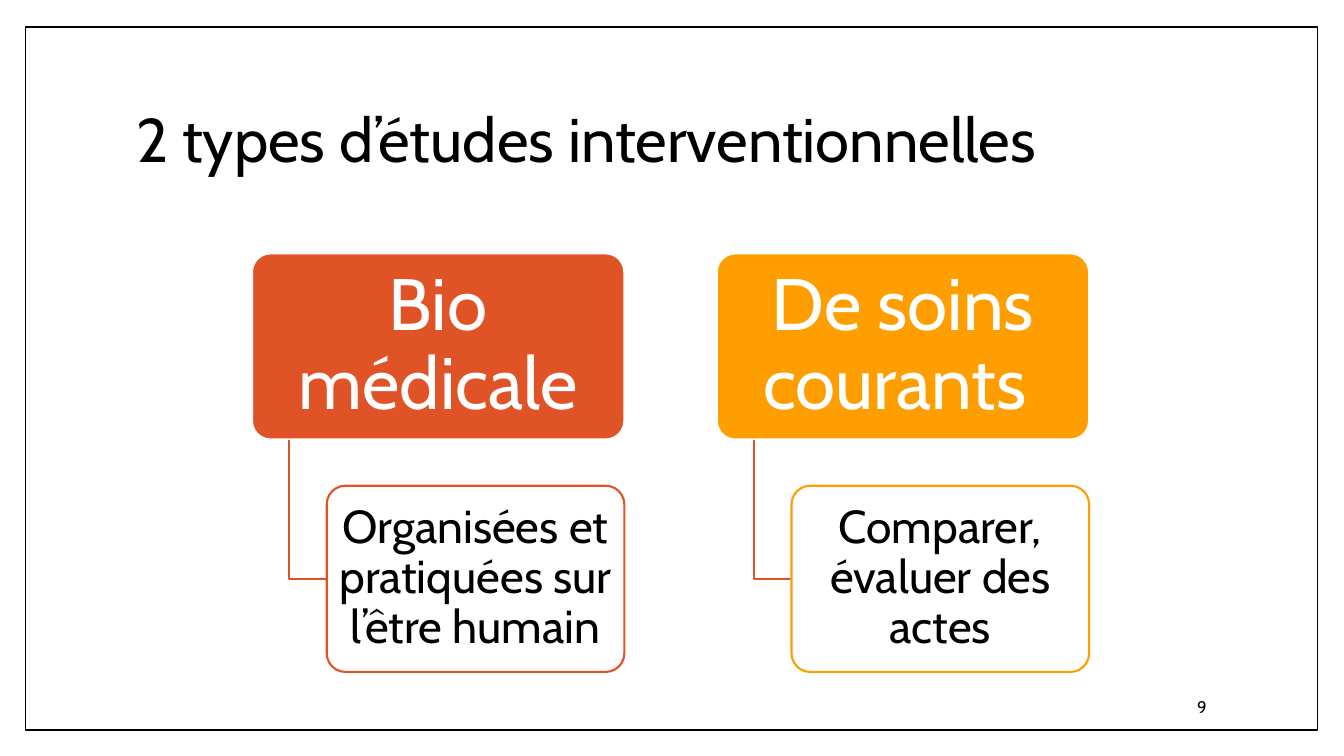
from dataclasses import dataclass

from lxml import etree
from pptx import Presentation
from pptx.dml.color import RGBColor
from pptx.enum.shapes import MSO_SHAPE
from pptx.enum.text import MSO_ANCHOR, PP_ALIGN
from pptx.oxml.ns import qn
from pptx.shapes.autoshape import Shape
from pptx.slide import Slide
from pptx.text.text import TextFrame
from pptx.util import Pt

RECTANGLE = MSO_SHAPE.RECTANGLE
ROUNDED = MSO_SHAPE.ROUNDED_RECTANGLE
MIDDLE = MSO_ANCHOR.MIDDLE
LEFT, CENTER, RIGHT = PP_ALIGN.LEFT, PP_ALIGN.CENTER, PP_ALIGN.RIGHT

BLACK = RGBColor(0x00, 0x00, 0x00)
WHITE = RGBColor(0xFF, 0xFF, 0xFF)
RUST = RGBColor(0xDF, 0x53, 0x27)
AMBER = RGBColor(0xFE, 0x9E, 0x00)
FONT = "Cabin"

# Geometry of the two branches, in points
BRANCH_LEFT, BRANCH_STEP = 180, 332
HEADING_TOP, DETAIL_TOP = 181, 347
HEADING_WIDTH, DETAIL_WIDTH = 266, 212.6
BOX_HEIGHT = 133
DETAIL_INDENT = HEADING_WIDTH - DETAIL_WIDTH
LINK_INDENT = HEADING_WIDTH / 10


@dataclass(frozen=True)
class Branch:
    heading: str
    detail: str
    color: RGBColor


@dataclass(frozen=True)
class Box:
    left: float
    top: float
    width: float
    height: float
    fill: RGBColor
    line: RGBColor
    line_width: float = 1.5


BRANCHES = [
    Branch("Bio médicale", "Organisées et pratiquées sur l’être humain", RUST),
    Branch("De soins courants ", "Comparer, évaluer des actes", AMBER),
]


def write(frame: TextFrame, text: str, size: float, color: RGBColor,
          align: PP_ALIGN, spacing: float = 0.9) -> None:
    frame.word_wrap = True
    frame.vertical_anchor = MIDDLE
    paragraph = frame.paragraphs[0]
    paragraph.alignment = align
    paragraph.line_spacing = spacing
    run = paragraph.add_run()
    run.text = text
    run.font.name = FONT
    run.font.size = Pt(size)
    run.font.color.rgb = color


def add_box(slide: Slide, kind: MSO_SHAPE, box: Box) -> Shape:
    shape = slide.shapes.add_shape(kind, Pt(box.left), Pt(box.top),
                                   Pt(box.width), Pt(box.height))
    shape.shadow.inherit = False
    shape.fill.solid()
    shape.fill.fore_color.rgb = box.fill
    shape.line.color.rgb = box.line
    shape.line.width = Pt(box.line_width)
    return shape


def add_label_box(slide: Slide, box: Box, text: str, size: float,
                  color: RGBColor, inset_x: float, inset_y: float) -> Shape:
    shape = add_box(slide, ROUNDED, box)
    shape.adjustments[0] = 0.1
    frame = shape.text_frame
    frame.margin_left = frame.margin_right = Pt(inset_x)
    frame.margin_top = frame.margin_bottom = Pt(inset_y)
    write(frame, text, size, color, CENTER)
    return shape


def set_opacity(shape: Shape, percent: int) -> None:
    fill_color = shape.fill._xPr.find(qn("a:solidFill"))[0]
    etree.SubElement(fill_color, qn("a:alpha")).set("val", str(percent * 1000))


def add_link(slide: Slide, left: float) -> None:
    x, bottom = left + LINK_INDENT, DETAIL_TOP + BOX_HEIGHT / 2
    builder = slide.shapes.build_freeform(Pt(x), Pt(HEADING_TOP + BOX_HEIGHT))
    builder.add_line_segments(
        [(Pt(x), Pt(bottom)), (Pt(left + DETAIL_INDENT), Pt(bottom))], close=False)
    link = builder.convert_to_shape()
    link.shadow.inherit = False
    link.fill.background()
    link.line.color.rgb = RUST
    link.line.width = Pt(1.5)


def add_branch(slide: Slide, left: float, branch: Branch) -> None:
    heading = Box(left, HEADING_TOP, HEADING_WIDTH, BOX_HEIGHT, branch.color, WHITE)
    add_label_box(slide, heading, branch.heading, 52, WHITE, 7.8, 5.2)
    add_link(slide, left)
    detail = Box(left + DETAIL_INDENT, DETAIL_TOP, DETAIL_WIDTH, BOX_HEIGHT,
                 WHITE, branch.color)
    detail_box = add_label_box(slide, detail, branch.detail, 33, BLACK, 5, 3.3)
    set_opacity(detail_box, 90)


def main() -> None:
    deck = Presentation()
    deck.slide_width, deck.slide_height = Pt(960), Pt(540)
    slide = deck.slides.add_slide(deck.slide_layouts[5])

    # Page frame, sent behind the title
    page_frame = add_box(slide, RECTANGLE, Box(18, 19.4, 923, 502, WHITE, BLACK, 1))
    slide.shapes.title._element.addprevious(page_frame._element)

    # Title
    title = slide.shapes.title
    title.left, title.top, title.width, title.height = Pt(90), Pt(48), Pt(778), Pt(107)
    write(title.text_frame, "2 types d’études interventionnelles", 44, BLACK, LEFT)

    # Slide number
    number = slide.shapes.add_textbox(Pt(734), Pt(490), Pt(135), Pt(29))
    write(number.text_frame, "9", 12, BLACK, RIGHT, 1.0)
    number.text_frame.paragraphs[0].space_after = Pt(6)

    # Study types
    for index, branch in enumerate(BRANCHES):
        add_branch(slide, BRANCH_LEFT + index * BRANCH_STEP, branch)

    deck.save("out.pptx")


if __name__ == "__main__":
    main()
